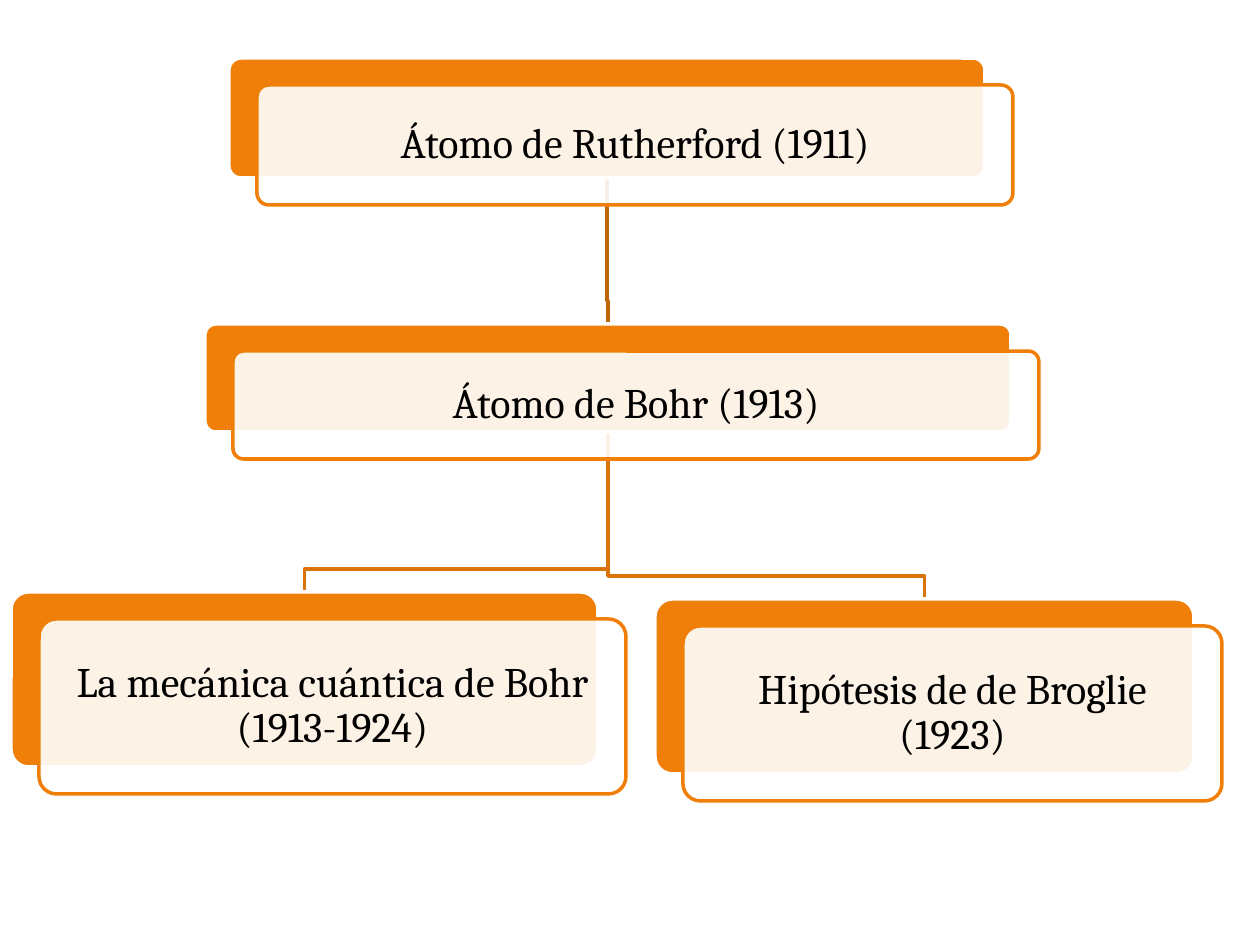
from lxml import etree
from pptx import Presentation
from pptx import util as u
from pptx.dml.color import RGBColor
from pptx.enum import shapes, text
from pptx.oxml.ns import qn

PX = 914400 / 126
ORANGE = RGBColor(0xF0, 0x7F, 0x09)
LINK_ORANGE = RGBColor(0xDA, 0x73, 0x08)
DARK_ORANGE = RGBColor(0xC0, 0x66, 0x07)
WHITE = RGBColor(0xFF, 0xFF, 0xFF)
BLACK = RGBColor(0x00, 0x00, 0x00)
OFFSET_X, OFFSET_Y = 28, 27
ELBOW_GAP = 23


def px(value):
    return u.Emu(round(value * PX))


def add_card(left, top, width, height, fill, line):
    card = slide.shapes.add_shape(shapes.MSO_SHAPE.ROUNDED_RECTANGLE,
                                  px(left), px(top), px(width), px(height))
    card.adjustments[0] = 0.1
    card.shadow.inherit = False
    card.fill.solid()
    card.fill.fore_color.rgb = fill
    card.line.color.rgb = line
    card.line.width = u.Pt(2)
    return card


presentation = Presentation()
presentation.slide_width = px(1260)
presentation.slide_height = px(945)
slide = presentation.slides.add_slide(presentation.slide_layouts[6])

rutherford = ("Átomo de Rutherford (1911)", 229, 58, 756, 120)
bohr = ("Átomo de Bohr (1913)", 205, 324, 806, 108)
quantum = ("La mecánica cuántica de Bohr\v(1913-1924)", 11, 592, 587, 175)
broglie = ("Hipótesis de de Broglie\v(1923)", 655, 599, 539, 175)

links = [(bohr, broglie, LINK_ORANGE), (bohr, quantum, LINK_ORANGE),
         (rutherford, bohr, DARK_ORANGE)]
for parent, child, color in links:
    start_x = px(parent[1] + parent[3] / 2)
    end_x = px(child[1] + child[3] / 2)
    start_y = px(parent[2] + parent[4])
    end_y = px(child[2])
    elbow_y = px(child[2] - ELBOW_GAP)
    builder = slide.shapes.build_freeform(start_x, start_y)
    builder.add_line_segments(
        [(start_x, elbow_y), (end_x, elbow_y), (end_x, end_y)], close=False)
    link = builder.convert_to_shape()
    link.shadow.inherit = False
    link.fill.background()
    link.line.color.rgb = color
    link.line.width = u.Pt(2)

for label, left, top, width, height in (rutherford, bohr, quantum, broglie):
    add_card(left, top, width, height, ORANGE, WHITE)
    front = add_card(left + OFFSET_X, top + OFFSET_Y, width, height, WHITE, ORANGE)
    white = front.fill._xPr.find(qn("a:solidFill"))[0]
    etree.SubElement(white, qn("a:alpha")).set("val", "90000")

    frame = front.text_frame
    frame.word_wrap = True
    frame.vertical_anchor = text.MSO_ANCHOR.MIDDLE
    frame.margin_left = frame.margin_right = u.Inches(0.1)
    frame.margin_top = frame.margin_bottom = u.Inches(0.1)
    frame.text = label
    paragraph = frame.paragraphs[0]
    paragraph.alignment = text.PP_ALIGN.CENTER
    paragraph.line_spacing = 0.9
    for run in paragraph.runs:
        run.font.name = "Cambria"
        run.font.size = u.Pt(24)
        run.font.color.rgb = BLACK

presentation.save("out.pptx")
